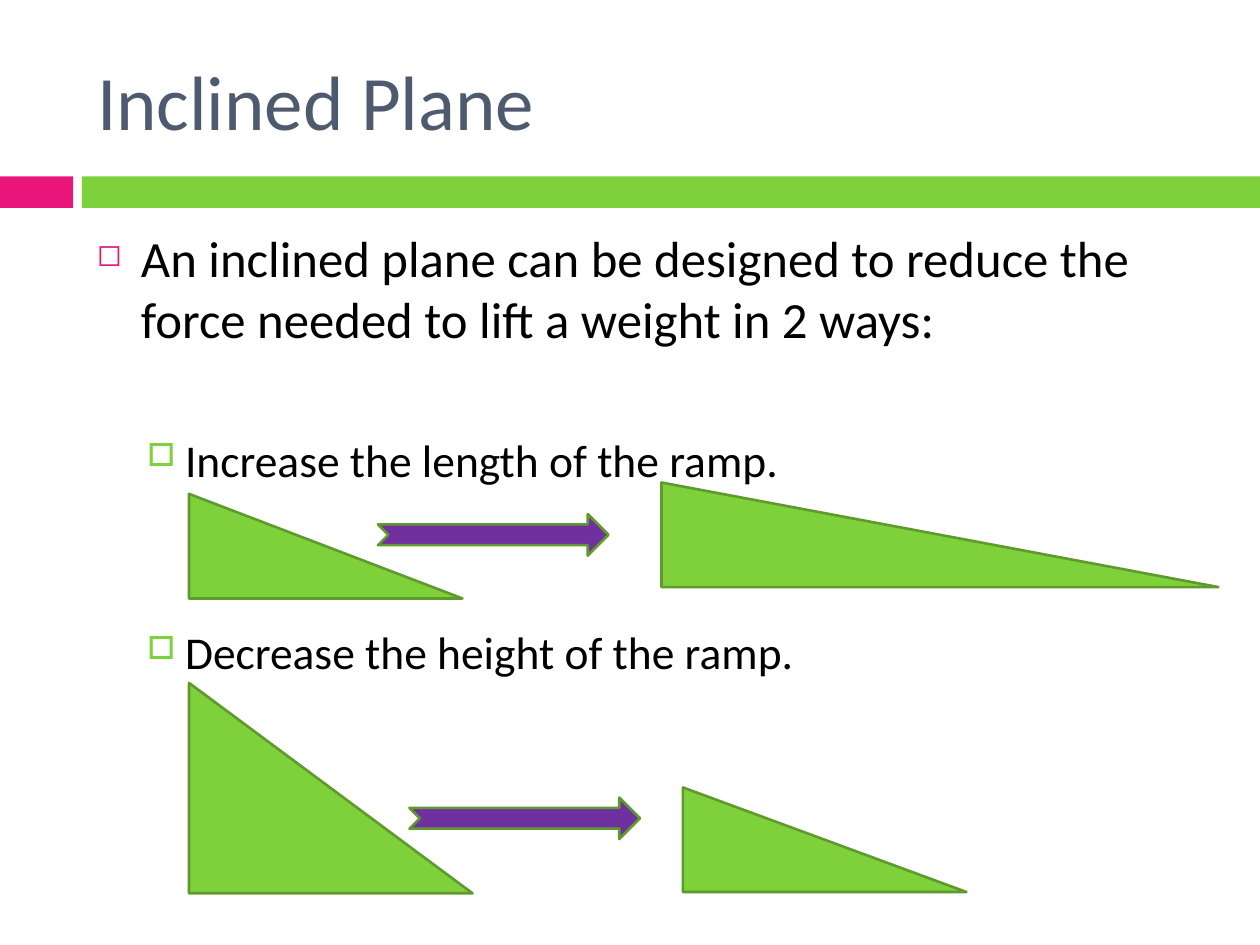
from dataclasses import dataclass

from lxml import etree
from pptx import Presentation
from pptx.dml.color import RGBColor
from pptx.enum import shapes, text
from pptx.oxml import ns
from pptx.util import Inches, Pt


@dataclass(frozen=True)
class Theme:
    font: str = "Calibri"
    title: str = "4E5B6F"
    body: str = "000000"
    pink: str = "EA157A"
    green: str = "7FD13B"
    outline: str = "5E9B2C"
    purple: str = "7030A0"
    title_size: float = 44
    lead_size: float = 29
    point_size: float = 26
    line_width: float = 1.5


THEME = Theme()
KIND = shapes.MSO_SHAPE


def add_span(para, words, size, color):
    span = para.add_run()
    span.text = words
    span.font.name = THEME.font
    span.font.size = Pt(size)
    span.font.color.rgb = RGBColor.from_string(color)


def add_block(page, kind, box, fill, outline=None):
    block = page.shapes.add_shape(kind, *map(Inches, box))
    block.shadow.inherit = False
    block.fill.solid()
    block.fill.fore_color.rgb = RGBColor.from_string(fill)
    if outline:
        block.line.color.rgb = RGBColor.from_string(outline)
        block.line.width = Pt(THEME.line_width)
    else:
        block.line.fill.background()


def set_bullet(para, symbol, color, percent, margin, hanging):
    props = para._p.get_or_add_pPr()
    props.set("marL", str(Inches(margin)))
    props.set("indent", str(-Inches(hanging)))
    tint = etree.SubElement(props, ns.qn("a:buClr"))
    etree.SubElement(tint, ns.qn("a:srgbClr"), val=color)
    etree.SubElement(props, ns.qn("a:buSzPct"), val=str(percent * 1000))
    etree.SubElement(props, ns.qn("a:buChar"), char=symbol)


def add_title(page, box, words):
    title = page.shapes.title
    title.left, title.top, title.width, title.height = map(Inches, box)
    frame = title.text_frame
    frame.vertical_anchor = text.MSO_ANCHOR.MIDDLE
    frame.auto_size = text.MSO_AUTO_SIZE.NONE
    para = frame.paragraphs[0]
    para.alignment = text.PP_ALIGN.LEFT
    add_span(para, words, THEME.title_size, THEME.title)


def add_band(page, box):
    left, top, width, height = box
    tab, gap = 0.58, 0.07
    add_block(page, KIND.RECTANGLE, (left, top, tab, height), THEME.pink)
    bar = (left + tab + gap, top, width - tab - gap, height)
    add_block(page, KIND.RECTANGLE, bar, THEME.green)


def add_body(page, box, lead, points):
    frame = page.shapes.add_textbox(*map(Inches, box)).text_frame
    frame.word_wrap = True
    para = frame.paragraphs[0]
    para.space_before = Pt(7)
    set_bullet(para, "◻", THEME.pink, 60, 0.35, 0.35)
    add_span(para, lead, THEME.lead_size, THEME.body)
    for words, gap in points:
        para = frame.add_paragraph()
        para.level = 1
        para.space_before = Pt(gap)
        set_bullet(para, "□", THEME.green, 70, 0.7, 0.3)
        add_span(para, words, THEME.point_size, THEME.body)


def add_comparison(page, before, after, arrow):
    for ramp in (before, after):
        add_block(page, KIND.RIGHT_TRIANGLE, ramp, THEME.green, THEME.outline)
    add_block(page, KIND.NOTCHED_RIGHT_ARROW, (*arrow, 1.83, 0.33),
              THEME.purple, THEME.outline)


def main():
    deck = Presentation()
    deck.slide_width, deck.slide_height = Inches(10), Inches(7.5)
    page = deck.slides.add_slide(deck.slide_layouts.get_by_name("Title Only"))
    add_band(page, (0, 1.4, 10, 0.25))
    add_title(page, (0.67, 0.25, 8.92, 1.08), "Inclined Plane")
    add_body(
        page, (0.67, 1.75, 8.92, 4.92),
        "An inclined plane can be designed to reduce the force needed "
        "to lift a weight in 2 ways:",
        [("Increase the length of the ramp.", 47.5),
         ("Decrease the height of the ramp.", 79)])
    add_comparison(page, (1.5, 3.92, 2.17, 0.83), (5.25, 3.83, 4.42, 0.83),
                   (3, 4.08))
    add_comparison(page, (1.5, 5.42, 2.25, 1.67), (5.42, 6.25, 2.25, 0.83),
                   (3.25, 6.33))
    deck.save("out.pptx")


if __name__ == "__main__":
    main()
